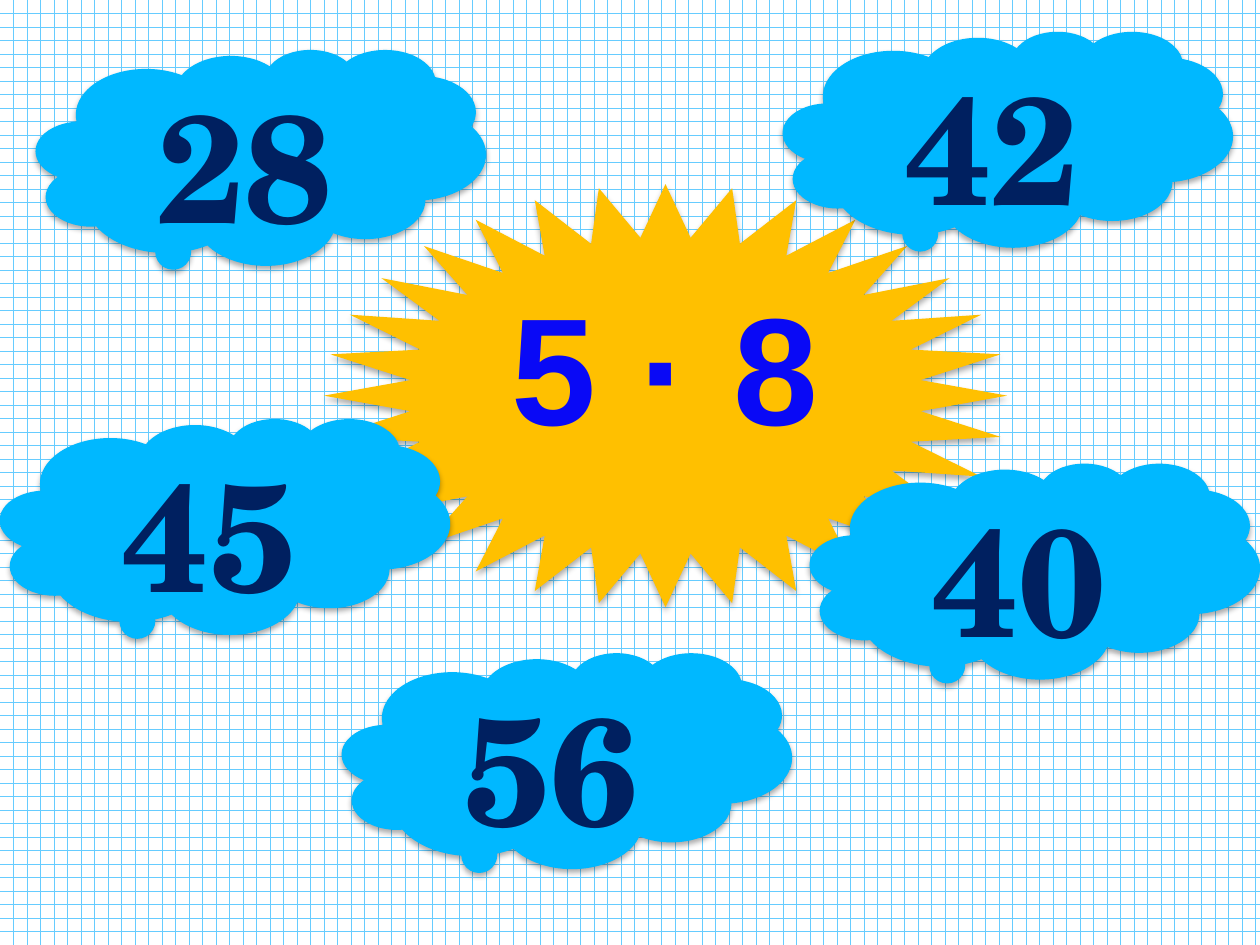
"""Build a multiplication quiz slide: a sun with the task and clouds with answers."""
from lxml.etree import SubElement
from pptx import Presentation
from pptx.dml.color import RGBColor
from pptx.enum.dml import MSO_PATTERN
from pptx.enum.shapes import MSO_SHAPE as SHAPE
from pptx.enum.text import MSO_ANCHOR as ANCHOR, PP_ALIGN as ALIGN
from pptx.oxml.ns import qn
from pptx.util import Pt

COLORS = {
    "grid": "66CCFF",
    "paper": "FFFFFF",
    "sun": "FFC000",
    "cloud": "00B8FF",
    "answer": "002060",
    "task": "0909F6",
    "task_end": "0101B3",
    "shadow": "000000",
}


def color(key):
    return RGBColor.from_string(COLORS[key])


def add_figure(text, *, kind, box, fill, font, ink, ink_end=None, tail=(), spacing=0):
    figure = slide.shapes.add_shape(kind, *[Pt(length) for length in box])
    for index, offset in enumerate(tail):
        figure.adjustments[index] = offset
    figure.fill.solid()
    figure.fill.fore_color.rgb = color(fill)
    figure.line.fill.background()

    figure.shadow.inherit = False
    effects = figure.element.spPr.find(qn("a:effectLst"))
    shadow = SubElement(effects, qn("a:outerShdw"), blurRad=str(Pt(3.5)),
                        dist=str(Pt(2.2)), dir="5400000", rotWithShape="0")
    shade = SubElement(shadow, qn("a:srgbClr"), val=COLORS["shadow"])
    SubElement(shade, qn("a:alpha"), val="32000")

    frame = figure.text_frame
    frame.word_wrap = True
    frame.vertical_anchor = ANCHOR.TOP
    paragraph = frame.paragraphs[0]
    paragraph.alignment = ALIGN.CENTER
    paragraph.line_spacing = 0.93
    run = paragraph.add_run()
    run.text = text
    run.font.name = font
    run.font.size = Pt(96)
    run.font.bold = True
    if ink_end:
        run.font.fill.gradient()
        run.font.fill.gradient_angle = 270
        stops = run.font.fill.gradient_stops
        for stop, key, position in zip(stops, (ink, ink_end), (0.25, 1)):
            stop.color.rgb = color(key)
            stop.position = position
    else:
        run.font.color.rgb = color(ink)
    if spacing:
        run.font._element.set("spc", str(int(spacing * 100)))


deck = Presentation()
deck.slide_width, deck.slide_height = Pt(793.75), Pt(595.25)
slide = deck.slides.add_slide(deck.slide_layouts[6])

paper = slide.background.fill
paper.patterned()
paper.pattern = MSO_PATTERN.HORIZONTAL_BRICK
paper.fore_color.rgb = color("grid")
paper.back_color.rgb = color("paper")

add_figure("5 · 8 ", kind=SHAPE.STAR_32_POINT, box=(204, 116, 430.5, 266.5),
           fill="sun", font="Arial", ink="task", ink_end="task_end", spacing=0.5)

answers = [
    ("28", 22.6, 31),
    ("42", 493.2, 19.6),
    ("45", 0, 263.5),
    ("40", 510.2, 291.6),
    ("56", 215.4, 411),
]
for answer, left, top in answers:
    add_figure(answer, kind=SHAPE.CLOUD_CALLOUT, box=(left, top, 283.5, 136),
               fill="cloud", font="TeX Gyre Schola", ink="answer", tail=(-0.16, 0.36))

deck.save("out.pptx")
